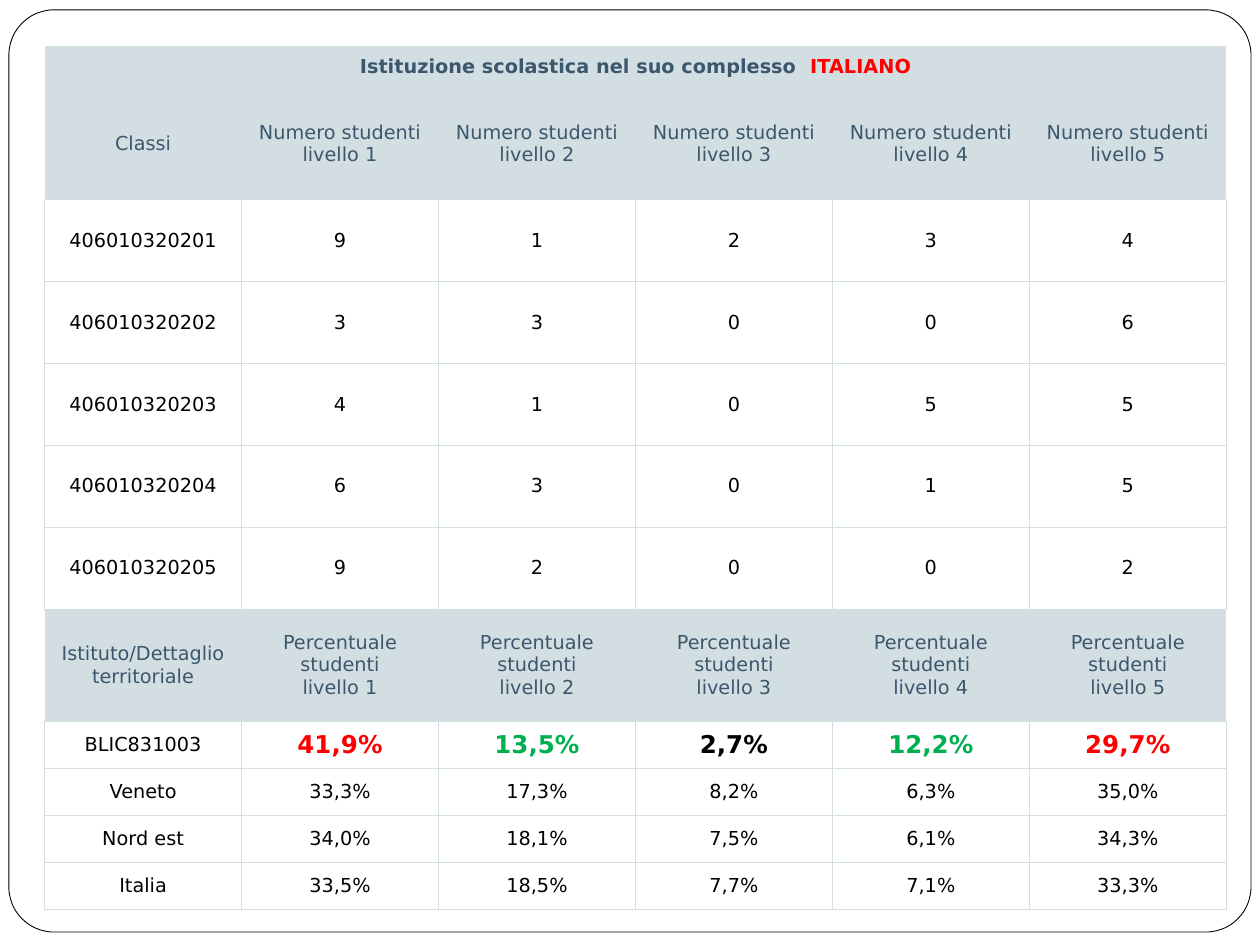
from lxml import etree
from pptx import Presentation
from pptx.dml.color import RGBColor
from pptx.enum.shapes import MSO_SHAPE
from pptx.enum.text import MSO_ANCHOR, PP_ALIGN
from pptx.oxml.ns import qn
from pptx.util import Cm, Pt

ROUNDED = MSO_SHAPE.ROUNDED_RECTANGLE
MIDDLE = MSO_ANCHOR.MIDDLE
CENTER = PP_ALIGN.CENTER

WHITE = RGBColor(0xFF, 0xFF, 0xFF)
BLACK = RGBColor(0x00, 0x00, 0x00)
MIST = RGBColor(0xD3, 0xDE, 0xE2)
SLATE = RGBColor(0x3B, 0x57, 0x6D)
RED = RGBColor(0xFF, 0x00, 0x00)
GREEN = RGBColor(0x00, 0xB0, 0x50)

LEVELS = range(1, 6)
CLASSES = [
    ("406010320201", "9", "1", "2", "3", "4"),
    ("406010320202", "3", "3", "0", "0", "6"),
    ("406010320203", "4", "1", "0", "5", "5"),
    ("406010320204", "6", "3", "0", "1", "5"),
    ("406010320205", "9", "2", "0", "0", "2"),
]
SCHOOL = ("BLIC831003", "41,9%", "13,5%", "2,7%", "12,2%", "29,7%")
SCHOOL_COLORS = (RED, GREEN, BLACK, GREEN, RED)
TERRITORIES = [
    ("Veneto", "33,3%", "17,3%", "8,2%", "6,3%", "35,0%"),
    ("Nord est", "34,0%", "18,1%", "7,5%", "6,1%", "34,3%"),
    ("Italia", "33,5%", "18,5%", "7,7%", "7,1%", "33,3%"),
]

COLUMN_WIDTH = 3.97
TITLE_HEIGHT, HEADING_HEIGHT, CLASS_HEIGHT, SHARE_HEIGHT = 0.84, 2.26, 1.65, 0.95
ROW_HEIGHTS = (
    [TITLE_HEIGHT, HEADING_HEIGHT]
    + [CLASS_HEIGHT] * len(CLASSES)
    + [HEADING_HEIGHT]
    + [SHARE_HEIGHT] * (1 + len(TERRITORIES))
)


class ResultsPage:
    font = "DejaVu Sans"
    size = Pt(11)
    large = Pt(14)
    border_width = Pt(0.75)

    def __init__(self, deck):
        self.page = deck.slides.add_slide(deck.slide_layouts[6])

    def frame(self, left, top, width, height):
        box = self.page.shapes.add_shape(
            ROUNDED, Cm(left), Cm(top), Cm(width), Cm(height))
        box.adjustments[0] = 0.049
        box.shadow.inherit = False
        box.fill.solid()
        box.fill.fore_color.rgb = WHITE
        box.line.color.rgb = BLACK
        box.line.width = Pt(0.5)

    def table(self, left, top, column_count, row_heights):
        """Add an empty grid without any banding and return it."""
        grid = self.page.shapes.add_table(
            len(row_heights), column_count, Cm(left), Cm(top),
            Cm(COLUMN_WIDTH * column_count), Cm(sum(row_heights))).table
        grid.first_row = grid.horz_banding = False
        for column in grid.columns:
            column.width = Cm(COLUMN_WIDTH)
        for row, height in zip(grid.rows, row_heights):
            row.height = Cm(height)
        return grid

    def borders(self, cell, sides):
        """Draw the named sides (letters of LRTB) and clear the others."""
        properties = cell._tc.get_or_add_tcPr()
        for side in "LRTB":
            line = etree.SubElement(properties, qn(f"a:ln{side}"))
            if side in sides:
                line.set("w", str(self.border_width))
                fill = etree.SubElement(line, qn("a:solidFill"))
                etree.SubElement(fill, qn("a:srgbClr"), val=str(MIST))
            else:
                etree.SubElement(line, qn("a:noFill"))

    def cell(self, cell, spans, fill=WHITE, sides="LRTB", inset=0.08):
        """Fill a cell with spans, each a text and its font format."""
        self.borders(cell, sides)
        cell.fill.solid()
        cell.fill.fore_color.rgb = fill
        cell.vertical_anchor = MIDDLE
        for edge in ("left", "right", "top", "bottom"):
            setattr(cell, f"margin_{edge}", Cm(inset))
        para = cell.text_frame.paragraphs[0]
        para.alignment = CENTER
        for text, style in spans:
            for number, line in enumerate(text.split("\n")):
                if number:
                    para.add_line_break()
                self.span(para, line, **style)

    def span(self, para, text, color=BLACK, **style):
        span = para.add_run()
        span.text = text
        span.font.color.rgb = color
        values = {"name": self.font, "size": self.size, "bold": False} | style
        for name, value in values.items():
            setattr(span.font, name, value)

    def heading(self, cell, spans, sides):
        self.cell(cell, spans, fill=MIST, sides=sides, inset=0.05)

    def heading_row(self, grid, row, texts, sides):
        for column, text in enumerate(texts):
            self.heading(grid.cell(row, column), [(text, {"color": SLATE})], sides)

    def data_row(self, grid, row, texts, styles=None):
        styles = styles or [{}] * len(texts)
        for column, (text, style) in enumerate(zip(texts, styles)):
            self.cell(grid.cell(row, column), [(text, style)])


def main():
    deck = Presentation()
    deck.slide_width, deck.slide_height = Cm(25.4), Cm(19.05)
    results = ResultsPage(deck)
    results.frame(0.18, 0.2, 25.04, 18.59)
    grid = results.table(0.9, 0.93, 1 + len(LEVELS), ROW_HEIGHTS)

    title = grid.cell(0, 0)
    title.merge(grid.cell(0, len(LEVELS)))
    results.heading(title, [
        ("Istituzione scolastica nel suo complesso  ", {"color": SLATE, "bold": True}),
        ("ITALIANO", {"color": RED, "bold": True}),
    ], sides="")

    results.heading_row(
        grid, 1, ["Classi"] + [f"Numero studenti\nlivello {n}" for n in LEVELS], "B")
    for row, texts in enumerate(CLASSES, start=2):
        results.data_row(grid, row, texts)

    share_row = 2 + len(CLASSES)
    results.heading_row(
        grid, share_row,
        ["Istituto/Dettaglio territoriale"]
        + [f"Percentuale studenti\nlivello {n}" for n in LEVELS], "TB")
    emphasis = [{"color": color, "size": results.large, "bold": True}
                for color in SCHOOL_COLORS]
    results.data_row(grid, share_row + 1, SCHOOL, [{}] + emphasis)
    for row, texts in enumerate(TERRITORIES, start=share_row + 2):
        results.data_row(grid, row, texts)

    deck.save("out.pptx")


if __name__ == "__main__":
    main()
